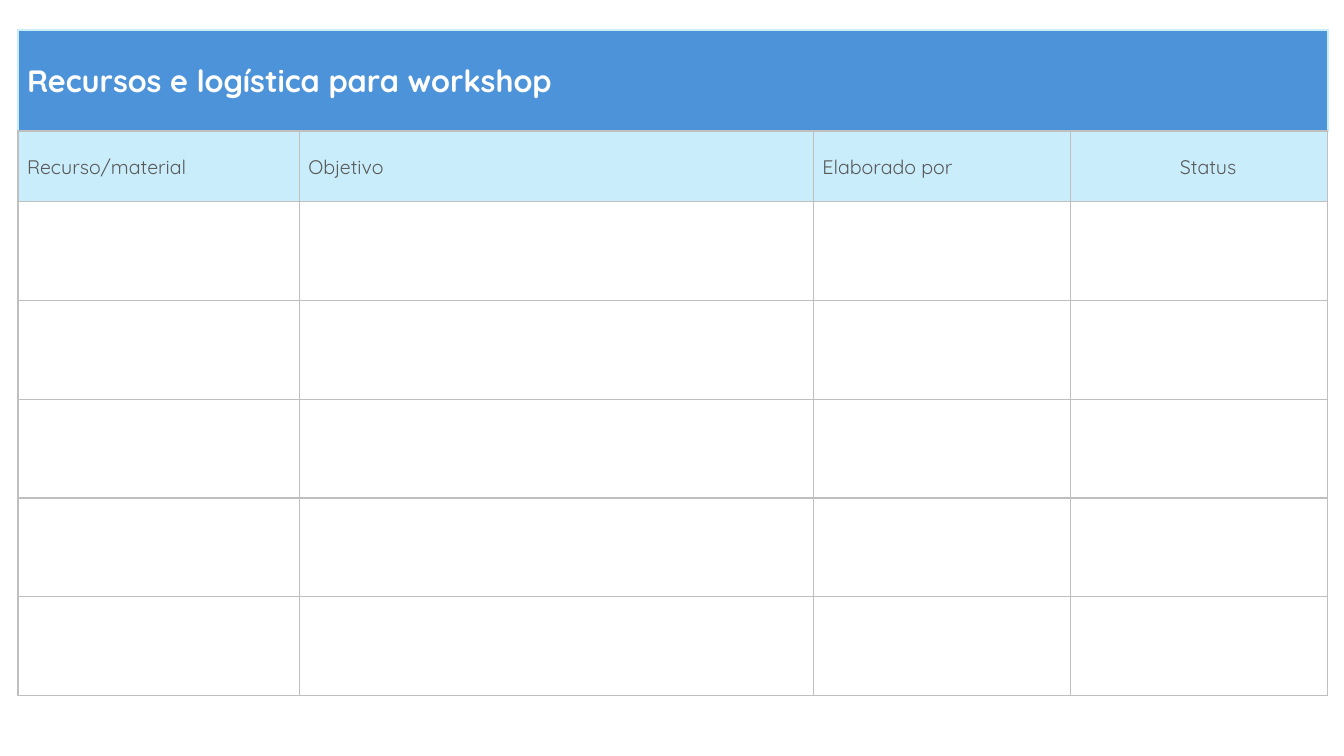
from dataclasses import dataclass

from lxml import etree
from pptx import Presentation
from pptx.dml.color import RGBColor
from pptx.enum.text import MSO_ANCHOR, PP_ALIGN
from pptx.oxml.ns import qn
from pptx.table import Table, _Cell
from pptx.util import Inches, Pt

LEFT, CENTER = PP_ALIGN.LEFT, PP_ALIGN.CENTER
MIDDLE = MSO_ANCHOR.MIDDLE
SIDES = ("L", "R", "T", "B")
BLANK_LAYOUT = 6


@dataclass(frozen=True)
class Theme:
    font: str = "Quicksand"
    title_size: float = 22
    header_size: float = 14
    white: str = "FFFFFF"
    gray_text: str = "595959"
    blue: str = "4D93D9"
    pale_blue: str = "CAEDFB"
    gray_line: str = "BFBFBF"
    thin: float = 1
    thick: float = 1.5


@dataclass(frozen=True)
class Column:
    heading: str
    span: float
    align: PP_ALIGN = LEFT
    indent: float = 0.09


THEME = Theme()
TITLE = "Recursos e logística para workshop"
COLUMNS = (
    Column("Recurso/material", 5.47),
    Column("Objetivo", 10),
    Column("Elaborado por", 5),
    Column("Status", 5, CENTER, 0.19),
)

# Grid units in inches; spans below count these units.
GRID_COLUMN, GRID_ROW = 0.51, 0.1
TABLE_LEFT, TABLE_TOP = 0.35, 3
EMPTY_ROWS = 5
ROW_SPANS = (10, 7) + (9.8,) * EMPTY_ROWS


def across(columns: float) -> int:
    return Inches(columns * GRID_COLUMN)


def down(rows: float) -> int:
    return Inches(rows * GRID_ROW)


def set_border(cell: _Cell, side: str, color: str, width: float) -> None:
    """Set one border, keeping the L, R, T, B order that precedes the fill."""
    properties = cell._tc.get_or_add_tcPr()
    tag = qn(f"a:ln{side}")
    for old_line in properties.findall(tag):
        properties.remove(old_line)
    line = etree.Element(tag, w=str(Pt(width)))
    fill = etree.SubElement(line, qn("a:solidFill"))
    etree.SubElement(fill, qn("a:srgbClr"), val=color)
    properties.insert(SIDES.index(side), line)


def write(cell: _Cell, text: str, *, size: float, color: str, fill: str,
          bold: bool = False, align: PP_ALIGN = LEFT, indent: float = 0.09) -> None:
    cell.fill.solid()
    cell.fill.fore_color.rgb = RGBColor.from_string(fill)
    cell.vertical_anchor = MIDDLE
    cell.margin_left = Inches(indent)
    cell.margin_top = cell.margin_right = Inches(0.01)
    cell.margin_bottom = 0
    para = cell.text_frame.paragraphs[0]
    para.alignment = align
    span = para.add_run()
    span.text = text
    span.font.name = THEME.font
    span.font.size = Pt(size)
    span.font.bold = bold
    span.font.color.rgb = RGBColor.from_string(color)


def draw_title(table: Table) -> None:
    last = len(COLUMNS) - 1
    title_cell = table.cell(0, 0)
    title_cell.merge(table.cell(0, last))
    write(title_cell, TITLE, size=THEME.title_size, color=THEME.white,
          fill=THEME.blue, bold=True)
    for index in range(len(COLUMNS)):
        cell = table.cell(0, index)
        sides = {0: "LRT", last: "RT"}.get(index, "T")
        for side in SIDES:
            if side in sides:
                set_border(cell, side, THEME.pale_blue, THEME.thick)
        set_border(cell, "B", THEME.gray_line, THEME.thin)


def draw_headings(table: Table) -> None:
    for index, column in enumerate(COLUMNS):
        write(table.cell(1, index), column.heading, size=THEME.header_size,
              color=THEME.gray_text, fill=THEME.pale_blue,
              align=column.align, indent=column.indent)


def add_resource_table(slide) -> None:
    frame = slide.shapes.add_table(
        len(ROW_SPANS), len(COLUMNS), across(TABLE_LEFT), down(TABLE_TOP),
        across(sum(column.span for column in COLUMNS)), down(sum(ROW_SPANS)))
    table = frame.table
    table.first_row = table.horz_banding = False
    for table_column, column in zip(table.columns, COLUMNS):
        table_column.width = across(column.span)
    for table_row, span in zip(table.rows, ROW_SPANS):
        table_row.height = down(span)
    for cell in table.iter_cells():
        cell.fill.background()
        for side in SIDES:
            set_border(cell, side, THEME.gray_line, THEME.thin)
    draw_title(table)
    draw_headings(table)


def main() -> None:
    deck = Presentation()
    deck.slide_width, deck.slide_height = Inches(13.33), Inches(7.5)
    page = deck.slides.add_slide(deck.slide_layouts[BLANK_LAYOUT])
    add_resource_table(page)
    deck.save("out.pptx")


if __name__ == "__main__":
    main()
